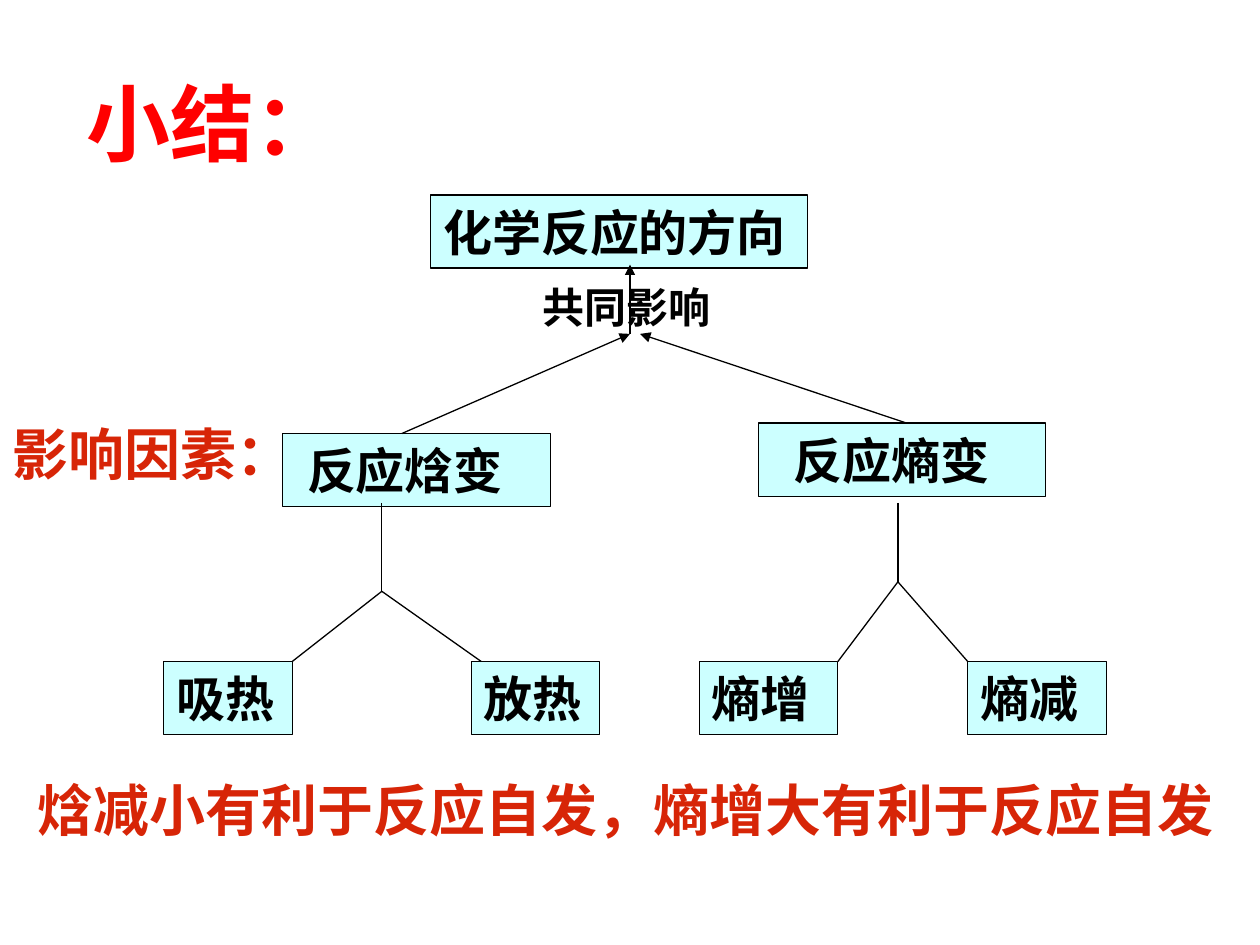
from lxml import etree
from pptx import Presentation
from pptx.dml.color import RGBColor
from pptx.enum import shapes, text
from pptx.oxml.ns import qn
from pptx.util import Pt

HUES = {"ink": "000000", "pale": "CCFFFF", "red": "FF0000", "rust": "D72507"}
SANS = "Noto Sans CJK SC"
BOX_H = 41.8
LEAF_Y = 378

# Content: words, left, top, width, extra left indent
BOXES = [
    ("化学反应的方向", 246.2, 111.4, 215.3, 0),
    ("反应焓变", 161.3, 247.6, 153.4, 7),
    ("反应熵变", 433.4, 241.8, 164.2, 13),
    ("吸热", 93.6, LEAF_Y, 73.4, 0),
    ("放热", 269.3, LEAF_Y, 73.4, 0),
    ("熵增", 399.6, LEAF_Y, 79.2, 0),
    ("熵减", 553, LEAF_Y, 79.2, 0),
]
# Words, place, format
LABELS = [
    ("影响因素：", (0, 236.2, 195.8, 45.4), dict(size=32, hue="rust", face="Arial")),
    ("共同影响", (303.1, 157, 124.6, 36), dict(size=24)),
    ("焓减小有利于反应自发，熵增大有利于反应自发", (14.4, 439.9, 700.6, 45.4),
     dict(size=32, hue="rust", face="Arial")),
]
# Arrows that meet below the top box: start, end
ARROWS = [
    ((360, 190.8), (360, 151.2)),
    ((229.7, 247.7), (360, 190.8)),
    ((518.4, 241.9), (365.8, 190.8)),
]
# Forks: stem top, joint, ends of the two branches
FORKS = [
    ((218.2, 287.3), (218.2, 337.9), [(167, LEAF_Y), (275, LEAF_Y)]),
    ((513.1, 287.3), (513.1, 332.5), [(478.8, LEAF_Y), (553, LEAF_Y)]),
]


def tint(name):
    return RGBColor.from_string(HUES[name])


def write(shape, words, size=28, hue="ink", face=SANS, indent=0):
    frame = shape.text_frame
    frame.auto_size = text.MSO_AUTO_SIZE.NONE
    frame.word_wrap = True
    frame.vertical_anchor = text.MSO_ANCHOR.MIDDLE
    frame.margin_left = Pt(7.2 + indent)
    frame.margin_right = 0
    para = frame.paragraphs[0]
    para.alignment = text.PP_ALIGN.LEFT
    para.space_before = Pt(0)
    run = para.add_run()
    run.text = words
    font = run.font
    font.size, font.bold, font.name = Pt(size), True, face
    font.color.rgb = tint(hue)
    # East Asian glyphs take their own face
    east = etree.SubElement(run._r.get_or_add_rPr(), qn("a:ea"))
    east.set("typeface", SANS if face == "Arial" else face)


def join(slide, start, end, head=False):
    line = slide.shapes.add_connector(
        shapes.MSO_CONNECTOR.STRAIGHT, *(Pt(v) for v in start + end))
    line.line.color.rgb = tint("ink")
    line.line.width = Pt(0.75)
    if head:
        tip = etree.SubElement(line.line._get_or_add_ln(), qn("a:tailEnd"))
        tip.set("type", "triangle")
    etree.SubElement(line._element.spPr, qn("a:effectLst"))


def main():
    deck = Presentation()
    deck.slide_width, deck.slide_height = Pt(720), Pt(540)
    slide = deck.slides.add_slide(deck.slide_layouts[5])

    # Title
    title = slide.shapes.title
    title.left, title.top, title.width, title.height = (
        Pt(v) for v in (42.5, 37.4, 152, 64.8))
    write(title, "小结：", size=48, hue="red", face="Noto Sans CJK JP")

    # Boxes
    for words, left, top, width, indent in BOXES:
        box = slide.shapes.add_shape(
            shapes.MSO_SHAPE.RECTANGLE, Pt(left), Pt(top), Pt(width), Pt(BOX_H))
        box.shadow.inherit = False
        box.fill.solid()
        box.fill.fore_color.rgb = tint("pale")
        box.line.color.rgb = tint("ink")
        box.line.width = Pt(0.75)
        write(box, words, indent=indent)

    # Free labels
    for words, place, style in LABELS:
        write(slide.shapes.add_textbox(*(Pt(v) for v in place)), words, **style)

    # Arrows and forks
    for start, end in ARROWS:
        join(slide, start, end, head=True)
    for top, joint, ends in FORKS:
        join(slide, top, joint)
        for end in ends:
            join(slide, joint, end)

    deck.save("out.pptx")


if __name__ == "__main__":
    main()
